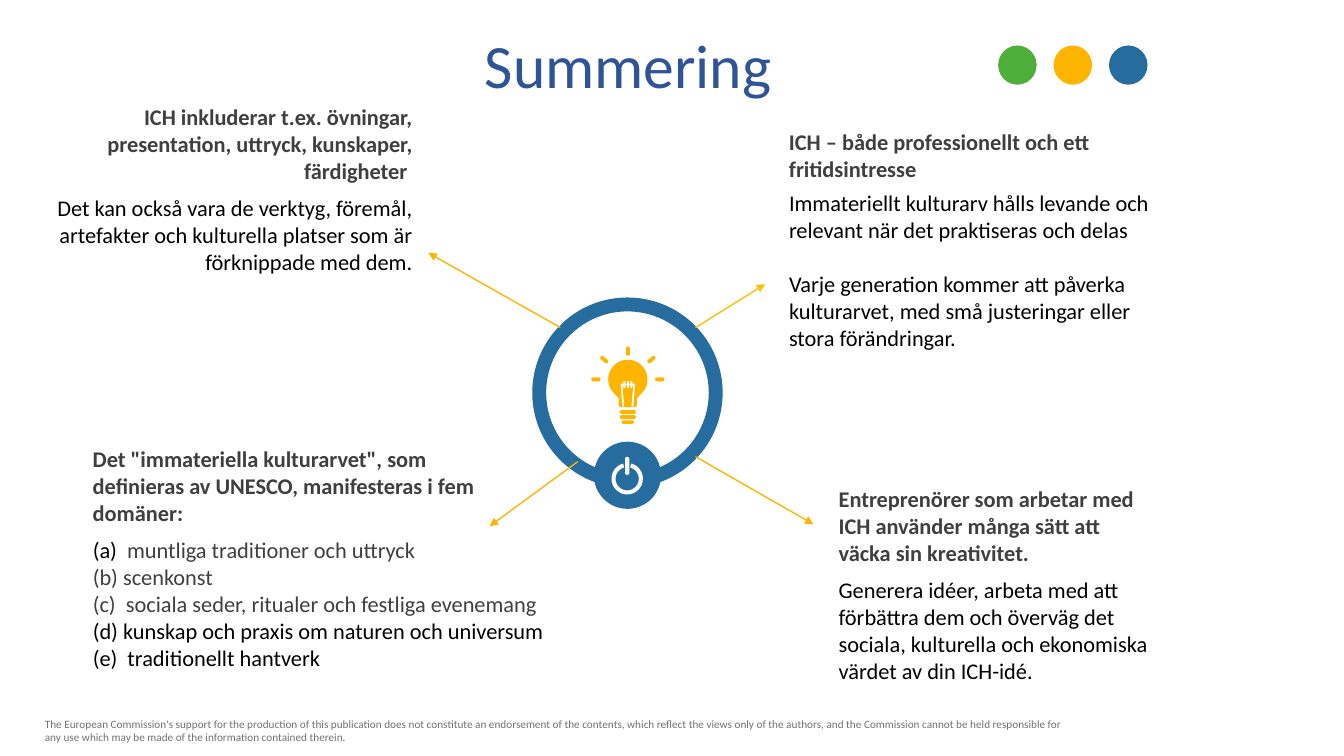
from math import cos, radians, sin

from lxml.etree import SubElement
from pptx import Presentation
from pptx.dml.color import RGBColor
from pptx.enum.shapes import MSO_CONNECTOR as Connector, MSO_SHAPE as Shape
from pptx.enum.text import PP_ALIGN as Align
from pptx.oxml.ns import qn
from pptx.util import Pt

BLUE = RGBColor(0x26, 0x6C, 0x9F)
YELLOW = RGBColor(0xFF, 0xB5, 0x00)
AMBER = RGBColor(0xFF, 0xC0, 0x00)
GREEN = RGBColor(0x4E, 0xAE, 0x3A)
NAVY = RGBColor(0x2F, 0x54, 0x96)
WHITE = RGBColor(0xFF, 0xFF, 0xFF)
BLACK = RGBColor(0x00, 0x00, 0x00)
DARK = RGBColor(0x3F, 0x3F, 0x3F)
GREY = RGBColor(0x75, 0x70, 0x70)

HEADING_HEIGHT = {2: 46, 3: 65}
LINE = 19.5


def fill_plain(shape, color):
    """Give a shape a solid fill without line or shadow."""
    shape.shadow.inherit = False
    shape.fill.solid()
    shape.fill.fore_color.rgb = color
    shape.line.fill.background()


def add_plain(slide, kind, box, color, adjustments=()):
    """Add a plain preset shape in a box of points."""
    shape = slide.shapes.add_shape(kind, *map(Pt, box))
    fill_plain(shape, color)
    for index, value in enumerate(adjustments):
        shape.adjustments[index] = value


def arc(x, y, radius, start, end, step=6):
    """Return points on a circle from one clockwise angle to another."""
    return [(x + radius * cos(radians(angle)), y + radius * sin(radians(angle)))
            for angle in range(start, end + (1 if step > 0 else -1), step)]


def capsule(x, y, length, width, angle=0):
    """Return the outline of a round-ended bar around its centre."""
    reach = (length - width) / 2
    shift_x, shift_y = reach * cos(radians(angle)), reach * sin(radians(angle))
    return (arc(x + shift_x, y + shift_y, width / 2, angle - 90, angle + 90, 15)
            + arc(x - shift_x, y - shift_y, width / 2, angle + 90, angle + 270, 15))


def add_outline(slide, left, top, contours, color):
    """Add one freeform from contours placed relative to a point."""
    builder = None
    for contour in contours:
        points = [(Pt(left + x), Pt(top + y)) for x, y in contour]
        if builder is None:
            builder = slide.shapes.build_freeform(*points[0], scale=1.0)
        else:
            builder.move_to(*points[0])
        builder.add_line_segments(points[1:])
    fill_plain(builder.convert_to_shape(), color)


def add_arrow(slide, start, end, color):
    """Add a thin straight arrow."""
    line = slide.shapes.add_connector(Connector.STRAIGHT, *map(Pt, (*start, *end)))
    line.line.color.rgb = color
    line.line.width = Pt(1)
    SubElement(line.line._get_or_add_ln(), qn("a:tailEnd"), type="triangle")
    SubElement(line._element.spPr, qn("a:effectLst"))


def add_text(slide, box, paragraphs, size, paragraph_format=None, bold=False, gap=0):
    """Add a text box whose paragraphs are lists of text and colour pairs."""
    frame = slide.shapes.add_textbox(*map(Pt, box)).text_frame
    frame.word_wrap = True
    for index, spans in enumerate(paragraphs):
        para = frame.add_paragraph() if index else frame.paragraphs[0]
        for name, value in (paragraph_format or {}).items():
            setattr(para, name, value)
        if index and gap:
            para.space_before = Pt(gap)
        for text, color in spans:
            span = para.add_run()
            span.text = text
            span.font.color.rgb = color
            for name, value in {"name": "Calibri", "size": Pt(size), "bold": bold}.items():
                setattr(span.font, name, value)


def add_callout(slide, box, heading, body, heading_width=None, lines=3,
                align=Align.LEFT, gap=0):
    """Place a bold heading with its body text right below it."""
    left, top, width, height = box
    heading_height = HEADING_HEIGHT[lines]
    format_values = {"alignment": align}
    add_text(slide, (left, top, heading_width or width, heading_height),
             [[(heading, DARK)]], 16, format_values, bold=True)
    body_top = top + heading_height - (2.2 if lines == 2 else 0)
    add_text(slide, (left, body_top, width, height - heading_height),
             body, 16, format_values, gap=gap)


def add_bulb(slide, center, top):
    """Draw a shining light bulb below a top point."""
    middle, neck, ticks = 23.3, 6.5, (-2.5, 0, 2.5)
    glass = arc(0, middle, 14, 135, 405) + [
        (neck, 36.7), (neck, 42), (neck - 1.5, 43.2),
        (1.5 - neck, 43.2), (-neck, 42), (-neck, 36.7)]
    filament = [(-5.2, 26.4)]
    for x in ticks:
        filament += [(x - 0.7, 26.4), (x - 0.7, 24.5), (x + 0.7, 24.5), (x + 0.7, 26.4)]
    filament += [(5.2, 26.4), (4, 42.5), (2.6, 42.5), (3.8, 27.6)]
    for x in reversed(ticks):
        filament += [(x + 0.7, 27.6), (x + 0.7, 29.3), (x - 0.7, 29.3), (x - 0.7, 27.6)]
    filament += [(-3.8, 27.6), (-2.6, 42.5), (-4, 42.5)]
    rays = [capsule(distance * cos(radians(angle)), middle - distance * sin(radians(angle)),
                    6.6, 2.8, -angle)
            for angle, distance in ((0, 22.8), (40, 22), (90, 20.2), (140, 22), (180, 22.8))]
    bars = [capsule(0, y, length, 2.6) for y, length in ((46.6, 11.5), (50.2, 11.5), (53.8, 8.6))]
    add_outline(slide, center, top, [glass, filament[::-1], *rays, *bars], YELLOW)


def add_emblem(slide, left, top, size):
    """Draw the ring with its bulb, power button and four arrows."""
    center, middle = left + size / 2, top + size / 2
    add_plain(slide, Shape.DONUT, (left, top, size, size), BLUE, (0.073,))
    button = 48
    button_top = top + 103
    add_plain(slide, Shape.OVAL, (center - button / 2, button_top, button, button), BLUE)
    add_bulb(slide, center + 0.3, top + 35.2)
    power_ring = arc(0, 26.5, 11.2, -75, 255) + arc(0, 26.5, 8.3, 255, -75, -6)
    add_outline(slide, center - 0.2, button_top,
                [power_ring, capsule(0, 17.3, 13, 3, 90)], WHITE)
    arrows = [((-47.9, -46.5), (-142.2, -99.8), YELLOW), ((48.6, -46.5), (98.3, -77.5), AMBER),
              ((48.6, 45.7), (132.8, 93.9), YELLOW), ((-35.6, 49.3), (-98.4, 95.3), YELLOW)]
    for (x1, y1), (x2, y2), color in arrows:
        add_arrow(slide, (center + x1, middle + y1), (center + x2, middle + y2), color)


def add_dots(slide, left, top, width, height):
    """Place the three coloured dots at an equal pitch."""
    for index, color in enumerate((GREEN, YELLOW, BLUE)):
        add_plain(slide, Shape.OVAL, (left + index * 39.6, top, width, height), color)


def main():
    """Build the summary slide and save it."""
    deck = Presentation()
    deck.slide_width, deck.slide_height = Pt(960), Pt(540)
    page = deck.slides.add_slide(deck.slide_layouts[6])
    add_text(page, (25, 508.5, 753, 26.5), [[(
        "The European Commission's support for the production of this publication does not "
        "constitute an endorsement of the contents, which reflect the views only of the "
        "authors, and the Commission cannot be held responsible for any use which may be "
        "made of the information contained therein.", GREY)]], 8)
    add_text(page, (206.5, 22, 484.5, 57), [[("Summering", NAVY)]], 44,
             {"alignment": Align.CENTER, "line_spacing": 0.9})
    add_emblem(page, 380.2, 212.5, 136)
    add_callout(
        page, (14.7, 70, 287, 130.5),
        "ICH inkluderar t.ex. övningar, presentation, uttryck, kunskaper, färdigheter ",
        [[("Det kan också vara de verktyg, föremål, artefakter och kulturella platser "
           "som är förknippade med dem.", BLACK)]], align=Align.RIGHT)
    add_callout(
        page, (59.2, 314.5, 464.5, 189),
        'Det "immateriella kulturarvet", som definieras av UNESCO, manifesteras i fem domäner:',
        [[("(a)  ", BLACK), ("muntliga traditioner och uttryck", DARK)],
         [("(b) scenkonst", DARK)],
         [("(c)  sociala seder, ritualer och festliga evenemang", DARK)],
         [("(d) kunskap och praxis om naturen och universum", BLACK)],
         [("(e)  traditionellt hantverk", BLACK)]], heading_width=319)
    add_callout(
        page, (556.5, 88, 287, 189),
        "ICH – både professionellt och ett fritidsintresse",
        [[("Immateriellt kulturarv hålls levande och relevant när det praktiseras "
           "och delas", BLACK)],
         [("Varje generation kommer att påverka kulturarvet, med små justeringar "
           "eller stora förändringar.", BLACK)]], heading_width=265.5, lines=2, gap=LINE)
    add_callout(
        page, (592, 343.3, 240.5, 169),
        "Entreprenörer som arbetar med ICH använder många sätt att väcka sin kreativitet.",
        [[("Generera idéer, arbeta med att förbättra dem och överväg det sociala, "
           "kulturella och ekonomiska värdet av din ICH-idé.", BLACK)]])
    add_dots(page, 713, 32.5, 27.5, 28)
    deck.save("out.pptx")


if __name__ == "__main__":
    main()
